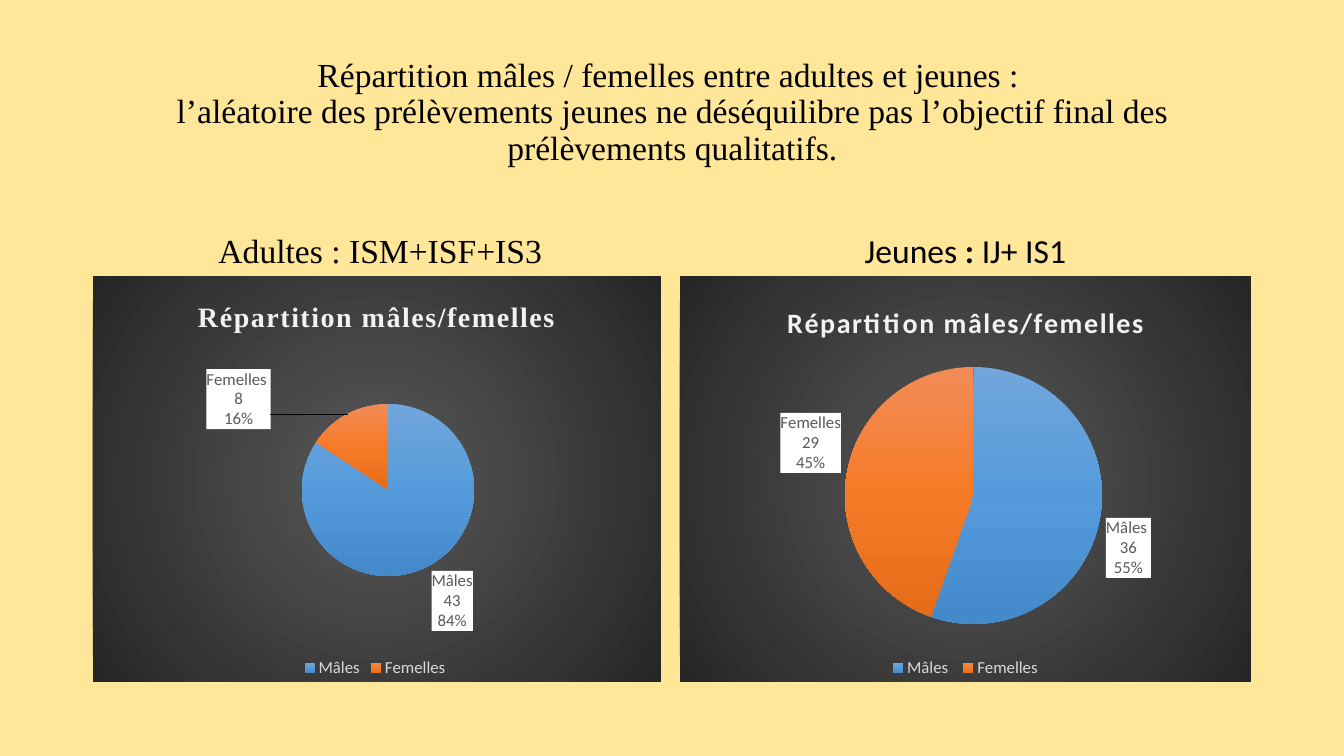
from copy import deepcopy

from lxml.etree import SubElement
from pptx import Presentation
from pptx.chart.data import CategoryChartData
from pptx.dml.color import RGBColor
from pptx.enum.chart import XL_CHART_TYPE, XL_LABEL_POSITION, XL_LEGEND_POSITION
from pptx.enum.text import MSO_ANCHOR, PP_ALIGN
from pptx.oxml import parse_xml
from pptx.oxml.ns import nsdecls, qn
from pptx.util import Pt

PX = 914400 / 100.8
SAND = RGBColor(0xFF, 0xE6, 0x99)
BLACK = RGBColor(0x00, 0x00, 0x00)
WHITE = RGBColor(0xFF, 0xFF, 0xFF)
PALE = RGBColor(0xF2, 0xF2, 0xF2)
SILVER = RGBColor(0xD9, 0xD9, 0xD9)
GREY = RGBColor(0x59, 0x59, 0x59)
CHARCOAL = RGBColor(0x26, 0x26, 0x26)
BLUES = [RGBColor(0x71, 0xA6, 0xDB), RGBColor(0x55, 0x9B, 0xDB), RGBColor(0x44, 0x8A, 0xCA)]
ORANGES = [RGBColor(0xF1, 0x8C, 0x57), RGBColor(0xF6, 0x7B, 0x28), RGBColor(0xE5, 0x6C, 0x19)]
SERIF = "Times New Roman"
SANS = "Calibri"
LINEAR = '<a:lin ang="5400000" scaled="0"/>'
RADIAL = '<a:path path="circle"><a:fillToRect l="50000" t="50000" r="50000" b="50000"/></a:path>'


def px(length):
    """Turn whole pixels into EMU."""
    return round(length * PX)


def gradient(colors, direction):
    """Return a gradient fill with evenly spaced stops."""
    step = 100000 // (len(colors) - 1)
    stops = "".join(
        f'<a:gs pos="{index * step}"><a:srgbClr val="{color}"/></a:gs>'
        for index, color in enumerate(colors)
    )
    return parse_xml(
        f'<a:gradFill {nsdecls("a")} rotWithShape="1"><a:gsLst>{stops}</a:gsLst>{direction}</a:gradFill>'
    )


def properties(fill):
    """Return chart shape properties with a fill and no outline."""
    element = parse_xml(f'<c:spPr {nsdecls("c", "a")}><a:ln><a:noFill/></a:ln></c:spPr>')
    element.insert(0, fill)
    return element


def layout(**values):
    """Return a manual chart layout."""
    parts = "".join(f'<c:{name} val="{value}"/>' for name, value in values.items())
    return parse_xml(f'<c:layout {nsdecls("c")}><c:manualLayout>{parts}</c:manualLayout></c:layout>')


def style_font(font, name, size, color, bold=False):
    """Set the main properties of a font."""
    font.name, font.size, font.bold = name, Pt(size), bold
    font.color.rgb = color


class SlideBuilder:
    """Holds the style and the current slide."""

    def __init__(self, deck):
        """Add a blank sand-coloured slide."""
        self.slide = deck.slides.add_slide(deck.slide_layouts[6])
        self.slide.background.fill.solid()
        self.slide.background.fill.fore_color.rgb = SAND

    def text(self, frame, lines, font, anchor):
        """Add a centred text box; each line is a list of (text, bold) runs."""
        box = self.slide.shapes.add_textbox(*map(px, frame))
        box.text_frame.word_wrap = True
        box.text_frame.vertical_anchor = anchor
        para = box.text_frame.paragraphs[0]
        para.alignment = PP_ALIGN.CENTER
        para.line_spacing = 0.9
        for index, line in enumerate(lines):
            if index:
                para.add_line_break()
            for words, bold in line:
                span = para.add_run()
                span.text = words
                style_font(span.font, font, 24, BLACK, bold)

    def pie(self, frame, counts, title_font, title_at, pie_at, shifts):
        """Add a pie chart; title and pie places are px within the chart."""
        data = CategoryChartData()
        data.categories = list(counts)
        data.add_series("Series 1", list(counts.values()))
        chart = self.slide.shapes.add_chart(XL_CHART_TYPE.PIE, *map(px, frame), data).chart
        style_font(chart.font, SANS, 10, BLACK)
        chart.element.find(qn("c:chart")).addnext(
            properties(gradient([GREY, CHARCOAL], RADIAL))
        )
        width, height = frame[2:]
        self.title(chart, title_font, title_at[0] / width, title_at[1] / height)
        chart.has_legend = True
        chart.legend.position = XL_LEGEND_POSITION.BOTTOM
        chart.legend.include_in_layout = False
        style_font(chart.legend.font, SANS, 12, SILVER)

        plot = chart.plots[0]
        plot.vary_by_categories = True
        area = chart.element.find(".//" + qn("c:plotArea"))
        for old in area.findall(qn("c:layout")):
            area.remove(old)
        left, top, side = pie_at
        area.insert(0, layout(
            layoutTarget="inner", xMode="edge", yMode="edge",
            x=round(left / width, 3), y=round(top / height, 3),
            w=round(side / width, 3), h=round(side / height, 3),
        ))
        for index, colors in enumerate([BLUES, ORANGES]):
            plot.series[0].points[index].format.line.fill.background()
            slice_style = chart.element.findall(".//" + qn("c:dPt"))[index].find(qn("c:spPr"))
            slice_style.insert(0, gradient(colors, LINEAR))
        self.labels(chart, plot.series[0].data_labels, shifts)

    def title(self, chart, font, x, y):
        """Add the bold chart title at a fraction of the chart."""
        chart.has_title = True
        chart.chart_title.include_in_layout = False
        span = chart.chart_title.text_frame.paragraphs[0].add_run()
        span.text = "Répartition mâles/femelles"
        style_font(span.font, font, 20, PALE, True)
        span.font._element.set("spc", "100")
        title = chart.element.find(".//" + qn("c:title"))
        for old in title.findall(qn("c:layout")):
            title.remove(old)
        title.find(qn("c:tx")).addnext(
            layout(xMode="edge", yMode="edge", x=round(x, 3), y=round(y, 3))
        )

    def labels(self, chart, labels, shifts):
        """Show name, count and share on white, moving chosen labels."""
        labels.show_category_name = labels.show_value = labels.show_percentage = True
        labels.position = XL_LABEL_POSITION.OUTSIDE_END
        style_font(labels.font, SANS, 12, GREY)
        group = chart.element.find(".//" + qn("c:dLbls"))
        white = parse_xml(f'<a:solidFill {nsdecls("a")}><a:srgbClr val="{WHITE}"/></a:solidFill>')
        group.find(qn("c:txPr")).addprevious(properties(white))
        separator = parse_xml(f'<c:separator {nsdecls("c")}>\n</c:separator>')
        leader = group.find(qn("c:showLeaderLines"))
        if leader is not None:
            group.remove(leader)
        group.append(separator)
        shared = list(group)
        for position, (index, (x, y)) in enumerate(shifts.items()):
            label = parse_xml(f'<c:dLbl {nsdecls("c")}/>')
            SubElement(label, qn("c:idx")).set("val", str(index))
            label.append(layout(x=x, y=y))
            label.extend(deepcopy(shared))
            group.insert(position, label)


def main():
    """Build and save the deck."""
    deck = Presentation()
    deck.slide_width, deck.slide_height = px(1344), px(756)
    page = SlideBuilder(deck)
    page.text((93, 40, 1159, 146), [
        [("Répartition mâles / femelles entre adultes et jeunes : ", False)],
        [("l’aléatoire des prélèvements jeunes ne déséquilibre pas l’objectif final "
          "des prélèvements qualitatifs.", False)],
    ], SERIF, MSO_ANCHOR.MIDDLE)
    page.text((93, 186, 568, 90), [[(" Adultes : ISM+ISF+IS3", False)]], SERIF, MSO_ANCHOR.BOTTOM)
    page.text((680, 186, 571, 90), [[("Jeunes", False), (" : ", True), ("IJ+ IS1", False)]],
              SANS, MSO_ANCHOR.BOTTOM)
    page.pie((93, 276, 568, 406), {"Mâles": 43, "Femelles ": 8}, SERIF,
             (100, 18), (209, 128, 172), {1: (-0.13, 0.05)})
    page.pie((680, 276, 571, 406), {"Mâles ": 36, "Femelles": 29}, SANS,
             (102, 22), (165, 91, 257), {})
    deck.save("out.pptx")


if __name__ == "__main__":
    main()
